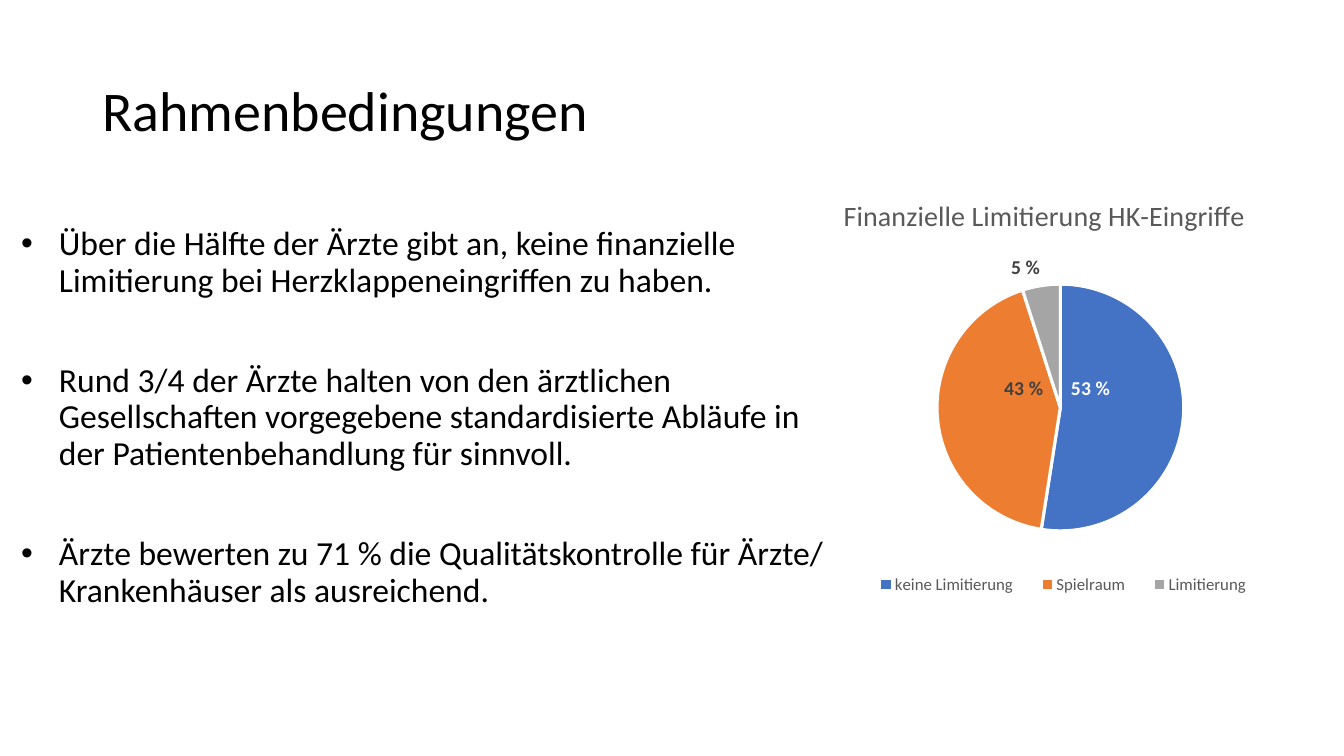
from dataclasses import dataclass
from lxml import etree
from pptx import Presentation
from pptx.chart.data import CategoryChartData
from pptx.dml.color import RGBColor
from pptx.enum.chart import XL_CHART_TYPE, XL_LABEL_POSITION, XL_LEGEND_POSITION
from pptx.enum.text import MSO_ANCHOR
from pptx.oxml.ns import qn
from pptx.util import Pt

PIE = XL_CHART_TYPE.PIE
CENTER = XL_LABEL_POSITION.CENTER
OUTSIDE = XL_LABEL_POSITION.OUTSIDE_END
BOTTOM = XL_LEGEND_POSITION.BOTTOM
MIDDLE = MSO_ANCHOR.MIDDLE


@dataclass(frozen=True)
class Theme:
    face: str = "Calibri"
    ink: str = "000000"
    grey: str = "595959"
    dark: str = "404040"
    white: str = "FFFFFF"
    head: int = 40
    body: int = 24
    title: int = 20
    label: int = 14
    small: int = 12


THEME = Theme()
POINTS = [
    "Über die Hälfte der Ärzte gibt an, keine finanzielle Limitierung bei "
    "Herzklappeneingriffen zu haben.",
    "Rund 3/4 der Ärzte halten von den ärztlichen Gesellschaften vorgegebene "
    "standardisierte Abläufe in der Patientenbehandlung für sinnvoll.",
    "Ärzte bewerten zu 71 % die Qualitätskontrolle für Ärzte/ "
    "Krankenhäuser als ausreichend.",
]
# name, value, fill, label colour, label position, label shift
SLICES = [
    ("keine Limitierung", 53, "4472C4", THEME.white, CENTER, (-0.05, -0.05)),
    ("Spielraum", 43, "ED7D31", THEME.dark, CENTER, (0.04, -0.05)),
    ("Limitierung", 5, "A5A5A5", THEME.dark, OUTSIDE, None),
]


def style(font, size, color, bold=False):
    for key, value in {"name": THEME.face, "size": Pt(size), "bold": bold}.items():
        setattr(font, key, value)
    font.color.rgb = RGBColor.from_string(color)


def add_text(slide, box, lines, size, gap=0):
    """Add a text box with one paragraph a line, and gap points between them."""
    frame = slide.shapes.add_textbox(*map(Pt, box)).text_frame
    frame.word_wrap = True
    for i, line in enumerate(lines):
        para = frame.add_paragraph() if i else frame.paragraphs[0]
        para.line_spacing = 0.9
        para.space_before = Pt(gap if i else 0)
        run = para.add_run()
        run.text = line
        style(run.font, size, THEME.ink)
    return frame


def add_bullet(para, indent):
    props = para._p.get_or_add_pPr()
    props.set("marL", str(Pt(indent)))
    props.set("indent", str(-Pt(indent)))
    etree.SubElement(props, qn("a:buFont")).set("typeface", "Arial")
    etree.SubElement(props, qn("a:buChar")).set("char", "•")


def place(node, index, **rules):
    """Give a chart part a manual layout, in fractions of the chart."""
    for old in node.findall(qn("c:layout")):
        node.remove(old)
    layout = etree.Element(qn("c:layout"))
    manual = etree.SubElement(layout, qn("c:manualLayout"))
    for tag, value in rules.items():
        etree.SubElement(manual, qn("c:" + tag)).set("val", str(value))
    node.insert(index, layout)


def add_label(point, text, color, where, shift):
    label = point.data_label
    run = label.text_frame.paragraphs[0].add_run()
    run.text = text
    style(run.font, THEME.label, color, True)
    label.position = where
    if shift:
        place(label._dLbl, 1, x=shift[0], y=shift[1])


def add_pie(slide, box, title):
    data = CategoryChartData()
    data.categories = [item[0] for item in SLICES]
    data.add_series("Series 1", [item[1] for item in SLICES])
    chart = slide.shapes.add_chart(PIE, *map(Pt, box), data).chart
    style(chart.font, THEME.small, THEME.grey)
    edge = {"xMode": "edge", "yMode": "edge"}

    chart.has_title = True
    run = chart.chart_title.text_frame.paragraphs[0].add_run()
    run.text = title
    style(run.font, THEME.title, THEME.grey)
    place(chart.chart_title._element, 1, **edge, x=0.15, y=0.1)

    chart.has_legend = True
    chart.legend.position = BOTTOM
    chart.legend.include_in_layout = False
    style(chart.legend.font, THEME.small, THEME.grey)
    place(chart.legend._element, 1, **edge, x=0.18, y=0.91, w=0.66, h=0.07)

    plot = chart.plots[0]
    plot.vary_by_categories = True
    place(chart._chartSpace.chart.plotArea, 0, layoutTarget="inner",
          **edge, x=0.04, y=0.3, w=0.93, h=0.53)
    for i, (_, value, fill, *look) in enumerate(SLICES):
        point = plot.series[0].points[i]
        point.format.fill.solid()
        point.format.fill.fore_color.rgb = RGBColor.from_string(fill)
        point.format.line.color.rgb = RGBColor.from_string(THEME.white)
        point.format.line.width = Pt(2.25)
        add_label(point, f"{value} %", *look)


def main():
    deck = Presentation()
    deck.slide_width, deck.slide_height = Pt(960), Pt(540)
    slide = deck.slides.add_slide(deck.slide_layouts[6])
    head = add_text(slide, (66, 28.8, 828, 104.4), ["Rahmenbedingungen"], THEME.head)
    head.vertical_anchor = MIDDLE
    body = add_text(slide, (8, 158.4, 605, 301), POINTS, THEME.body, 46)
    for para in body.paragraphs:
        add_bullet(para, 27)
    add_pie(slide, (532, 103.2, 446.4, 332.6), "Finanzielle Limitierung HK-Eingriffe")
    deck.save("out.pptx")


if __name__ == "__main__":
    main()
